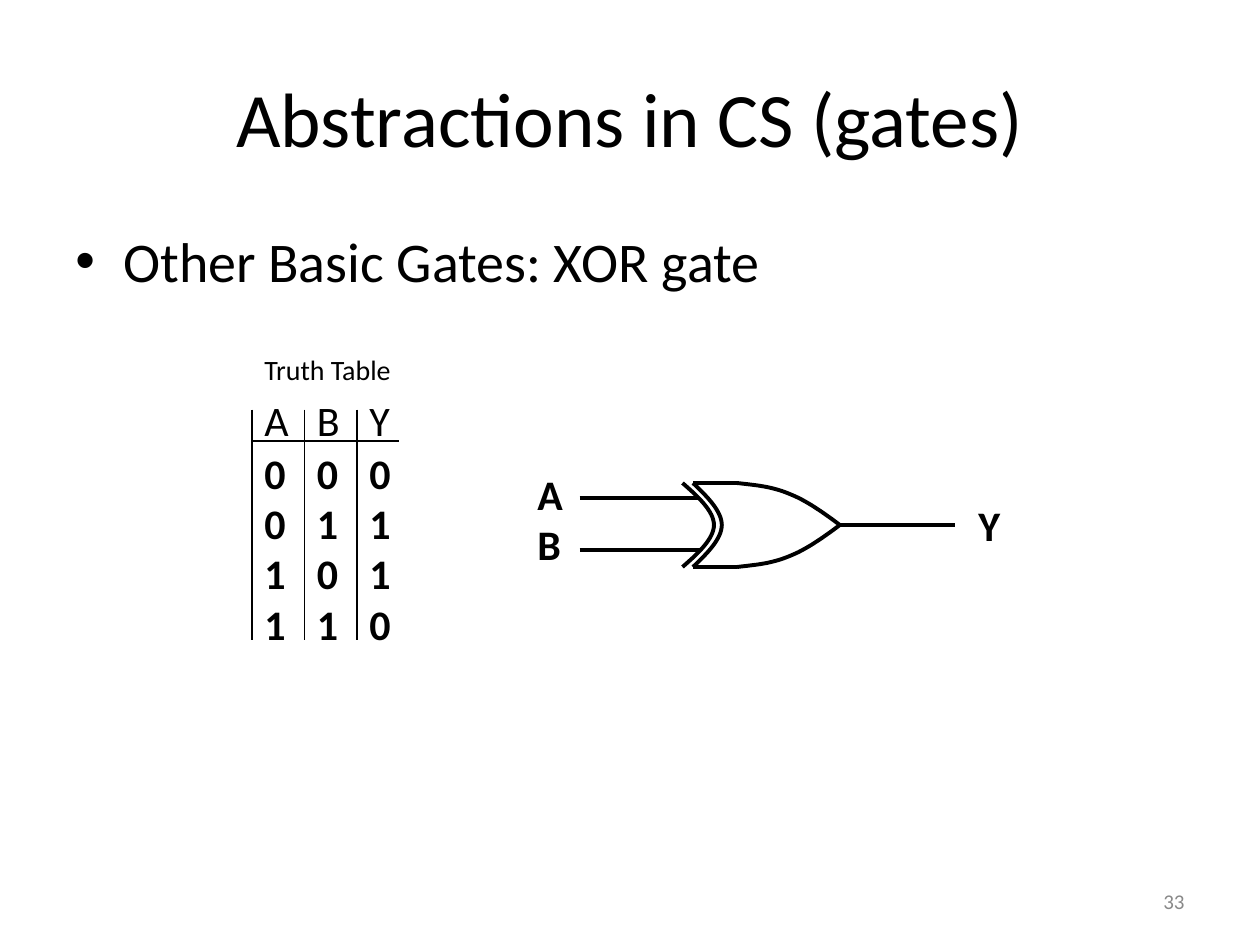
"""Build the XOR gate slide on a grid of twelfths of an inch."""
from dataclasses import dataclass

from lxml.etree import SubElement
from pptx import Presentation
from pptx.dml.color import RGBColor
from pptx.enum.shapes import MSO_CONNECTOR
from pptx.enum.text import MSO_ANCHOR, PP_ALIGN
from pptx.oxml.ns import qn
from pptx.util import Inches, Pt

BLACK = RGBColor(0x00, 0x00, 0x00)
GRAY = RGBColor(0x89, 0x89, 0x89)
FONT = "Calibri"
LEFT, STEP = 24, 5
HEAD, RULE, FOOT = 39, 42, 61
MID = 50
THIN, THICK = 0.75, 2.25
Point = tuple[float, float]


@dataclass
class Label:
    text: str
    left: float
    top: float
    wide: float
    high: float
    size: float = 24
    bold: bool = False
    color: RGBColor = BLACK


@dataclass
class Wire:
    start: Point
    end: Point
    width: float = THICK


@dataclass
class Curve:
    start: Point
    bends: list[tuple[Point, Point, Point]]


def grid(units: float) -> int:
    return Inches(units / 12)


def style(frame, size: float, bold: bool = False, color: RGBColor = BLACK) -> None:
    for para in frame.paragraphs:
        for run in para.runs:
            font = run.font
            font.name, font.size, font.bold = FONT, Pt(size), bold
            font.color.rgb = color


def write(slide, label: Label):
    box = slide.shapes.add_textbox(
        *map(grid, (label.left, label.top, label.wide, label.high)))
    frame = box.text_frame
    frame.word_wrap = False
    frame.text = label.text
    style(frame, label.size, label.bold, label.color)
    return frame


def draw(slide, wire: Wire) -> None:
    line = slide.shapes.add_connector(
        MSO_CONNECTOR.STRAIGHT, *map(grid, wire.start + wire.end))
    line.line.color.rgb = BLACK
    line.line.width = Pt(wire.width)
    SubElement(line._element.spPr, qn("a:effectLst"))


def bend(start: Point, pull: tuple[Point, Point, Point], steps: int = 16) -> list[Point]:
    knots = (start, *pull)
    dots = []
    for i in range(1, steps + 1):
        t = i / steps
        s = 1 - t
        mix = (s ** 3, 3 * s * s * t, 3 * s * t * t, t ** 3)
        dots.append(tuple(sum(m * k[axis] for m, k in zip(mix, knots))
                          for axis in (0, 1)))
    return dots


def trace(slide, curve: Curve, flip: bool = False) -> None:
    dots = [curve.start]
    for pull in curve.bends:
        dots += bend(dots[-1], pull)
    if flip:
        dots = [(x, 2 * MID - y) for x, y in dots]
    first, *rest = [(grid(x), grid(y)) for x, y in dots]
    pen = slide.shapes.build_freeform(*first)
    pen.add_line_segments(rest, close=False)
    shape = pen.convert_to_shape()
    shape.shadow.inherit = False
    shape.fill.background()
    shape.line.color.rgb = BLACK
    shape.line.width = Pt(THICK)


def arc(left: float, depth: float) -> Curve:
    peak = left + depth
    half = left + depth / 2
    return Curve((left, 54), [((half, 52.7), (peak, 51.3), (peak, MID)),
                              ((peak, 48.7), (half, 47.3), (left, 46))])


def table(slide) -> None:
    write(slide, Label("Truth Table", LEFT, 33, 15.1, 4.4, 16))
    columns = {"A": "0011", "B": "0101", "Y": "0110"}
    for i, (name, bits) in enumerate(columns.items()):
        left = LEFT + i * STEP
        draw(slide, Wire((left, HEAD), (left, FOOT), THIN))
        write(slide, Label(name, left, 37, 5.2, 6))
        write(slide, Label("\n".join(bits), left, RULE, 4.4, 20.4, bold=True))
    draw(slide, Wire((LEFT, RULE), (38, RULE), THIN))


def gate(slide) -> None:
    wires = [Wire((55.2, 47.4), (66.5, 47.4)), Wire((55.2, 52.4), (66.8, 52.4)),
             Wire((80, MID), (91, MID)),
             Wire((66, 46), (70.2, 46)), Wire((66, 54), (70.2, 54))]
    for wire in wires:
        draw(slide, wire)
    nose = Curve((70.2, 46), [((71.9, 46.2), (73.4, 46.3), (75.1, 47)),
                              ((76.7, 47.6), (78.4, 48.8), (80, MID))])
    for flip in (False, True):
        trace(slide, nose, flip)
    trace(slide, arc(66, 2.75))
    trace(slide, arc(65, 3))
    write(slide, Label("A\nB", 50, 44, 5.3, 10.8, bold=True))
    write(slide, Label("Y", 92, 47, 5.3, 6, bold=True))


def bullet(slide) -> None:
    frame = write(slide, Label("Other Basic Gates: XOR gate", 6, 21, 108, 59.4, 32))
    frame.word_wrap = True
    para = frame.paragraphs[0]
    para.space_before = Pt(6.4)
    props = para._p.get_or_add_pPr()
    props.set("marL", str(Inches(0.38)))
    props.set("indent", str(Inches(-0.38)))
    SubElement(props, qn("a:buFont"), typeface="Arial")
    SubElement(props, qn("a:buChar"), char="•")


def main() -> None:
    deck = Presentation()
    deck.slide_width, deck.slide_height = Inches(10), Inches(7.5)
    slide = deck.slides.add_slide(deck.slide_layouts[5])
    title = slide.shapes.title
    title.left, title.top, title.width, title.height = map(grid, (6, 3.6, 108, 15))
    frame = title.text_frame
    frame.text = "Abstractions in CS (gates)"
    frame.vertical_anchor = MSO_ANCHOR.MIDDLE
    frame.paragraphs[0].alignment = PP_ALIGN.CENTER
    style(frame, 44)
    bullet(slide)
    table(slide)
    gate(slide)
    page = write(slide, Label("33", 86, 83.4, 28, 4.8, 12, color=GRAY))
    page.word_wrap = True
    page.vertical_anchor = MSO_ANCHOR.MIDDLE
    page.paragraphs[0].alignment = PP_ALIGN.RIGHT
    deck.save("out.pptx")


if __name__ == "__main__":
    main()
